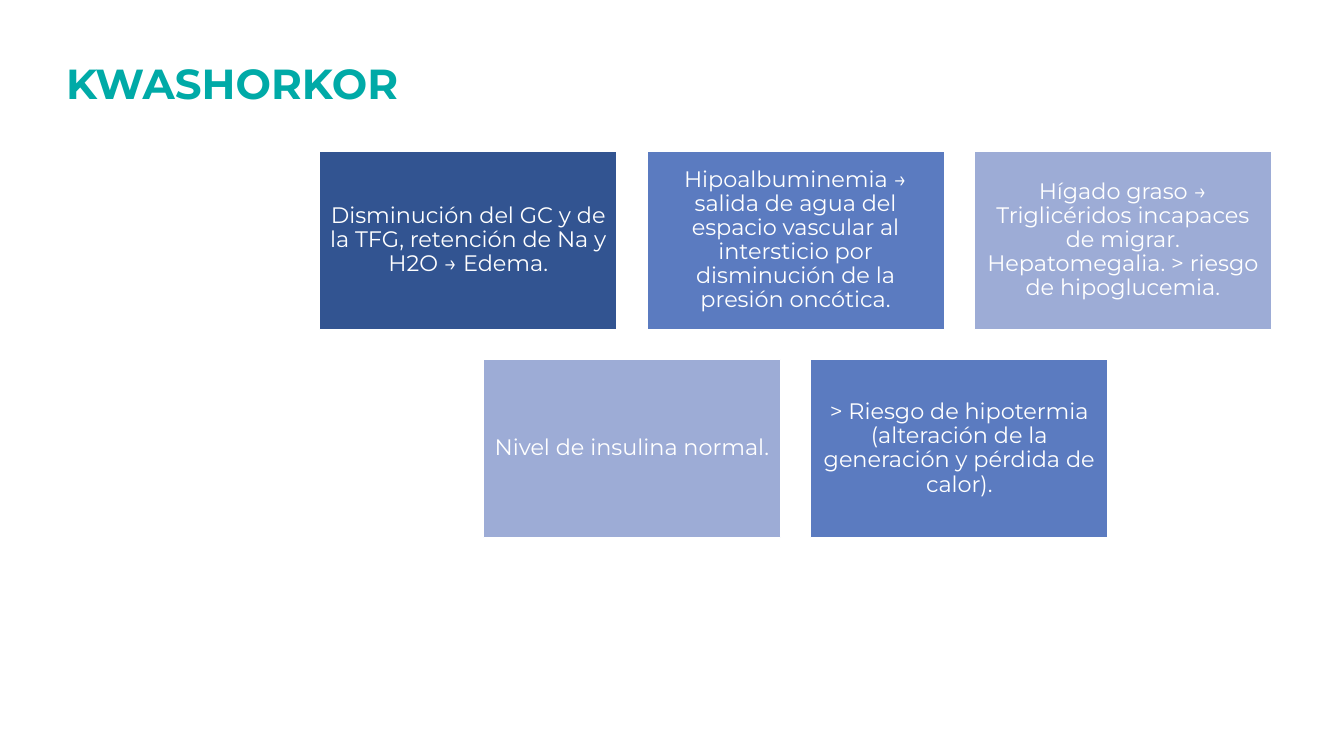
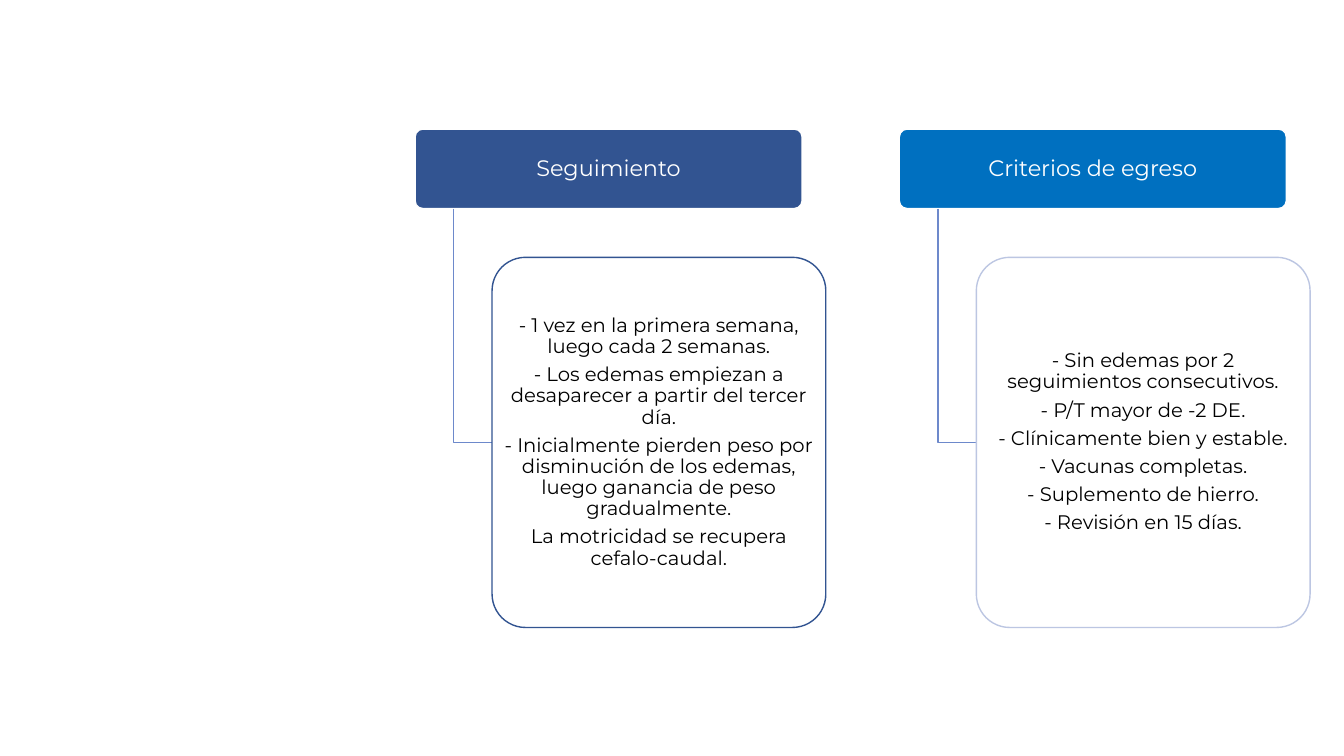
from dataclasses import dataclass

from lxml import etree
from pptx import Presentation
from pptx.dml.color import RGBColor
from pptx.enum.shapes import MSO_SHAPE as Preset
from pptx.enum.text import MSO_ANCHOR as Anchor
from pptx.enum.text import MSO_AUTO_SIZE as AutoSize
from pptx.enum.text import PP_ALIGN as Align
from pptx.oxml.ns import qn
from pptx.shapes.autoshape import Shape
from pptx.slide import Slide
from pptx.text.text import TextFrame
from pptx.util import Pt

FONT = "Montserrat"
WHITE = "FFFFFF"
BLACK = "000000"
TEAL = "00AAA7"
NAVY = "325491"
BLUE = "5B7BC0"
LAVENDER = "9DACD6"
BRIGHT = "0070C0"
PALE = "BCC6E2"
BRACKET = "6D89CB"

CARD_WIDTH, CARD_HEIGHT, CARD_GAP = 212.4, 127.4, 21.4
CARDS_TOP, CARDS_CENTER = 108, 568.3

COLUMN_LEFT, COLUMN_TOP, COLUMN_PITCH = 296.5, 92.2, 345.9
HEADER_WIDTH, HEADER_HEIGHT = 276.5, 56.8
DETAIL_INDENT, DETAIL_TOP = 55, 183.8
DETAIL_WIDTH, DETAIL_HEIGHT = 238.4, 264.4


@dataclass(frozen=True)
class Card:
    text: str
    fill: str


@dataclass(frozen=True)
class Column:
    heading: str
    fill: str
    border: str
    items: tuple[str, ...]


@dataclass(frozen=True)
class Area:
    left: float
    top: float
    width: float
    height: float


CARD_ROWS = (
    (
        Card("Disminución del GC y de la TFG, retención de Na y H2O → Edema.", NAVY),
        Card("Hipoalbuminemia → salida de agua del espacio vascular al "
             "intersticio por disminución de la presión oncótica.", BLUE),
        Card("Hígado graso → Triglicéridos incapaces de migrar. "
             "Hepatomegalia. > riesgo de hipoglucemia.", LAVENDER),
    ),
    (
        Card("Nivel de insulina normal.", LAVENDER),
        Card("> Riesgo de hipotermia (alteración de la generación y "
             "pérdida de calor).", BLUE),
    ),
)

COLUMNS = (
    Column("Seguimiento", NAVY, NAVY, (
        "- 1 vez en la primera semana, luego cada 2 semanas.",
        "- Los edemas empiezan a desaparecer a partir del tercer día.",
        "- Inicialmente pierden peso por disminución de los edemas, "
        "luego ganancia de peso gradualmente.",
        "La motricidad se recupera cefalo-caudal.",
    )),
    Column("Criterios de egreso", BRIGHT, PALE, (
        "- Sin edemas por 2 seguimientos consecutivos.",
        "- P/T mayor de -2 DE.",
        "- Clínicamente bien y estable.",
        "- Vacunas completas.",
        "- Suplemento de hierro.",
        "- Revisión en 15 días.",
    )),
)


def color(value: str) -> RGBColor:
    return RGBColor.from_string(value)


def write(frame: TextFrame, texts: tuple[str, ...], size: float, ink: str,
          bold: bool = False, line_spacing: float = 0.9, gap: float = 5) -> None:
    frame.word_wrap = True
    for index, text in enumerate(texts):
        para = frame.add_paragraph() if index else frame.paragraphs[0]
        para.alignment = Align.CENTER
        para.line_spacing = line_spacing
        para.space_before = Pt(0)
        para.space_after = Pt(gap)
        span = para.add_run()
        span.text = text
        span.font.name = FONT
        span.font.size = Pt(size)
        span.font.bold = bold
        span.font.color.rgb = color(ink)


def set_insets(frame: TextFrame, side: float, end: float) -> None:
    frame.margin_left = frame.margin_right = Pt(side)
    frame.margin_top = frame.margin_bottom = Pt(end)


def add_box(page: Slide, preset: Preset, area: Area, fill: str, border: str) -> Shape:
    box = page.shapes.add_shape(
        preset, Pt(area.left), Pt(area.top), Pt(area.width), Pt(area.height))
    box.shadow.inherit = False
    box.fill.solid()
    box.fill.fore_color.rgb = color(fill)
    box.line.color.rgb = color(border)
    box.line.width = Pt(1)
    box.text_frame.vertical_anchor = Anchor.MIDDLE
    return box


def add_rounded(page: Slide, area: Area, fill: str, border: str) -> Shape:
    box = add_box(page, Preset.ROUNDED_RECTANGLE, area, fill, border)
    box.adjustments[0] = 0.1
    set_insets(box.text_frame, 2, 1.5)
    return box


def set_opacity(box: Shape, percent: int) -> None:
    tint = box.fill._xPr.find(qn("a:solidFill"))[0]
    etree.SubElement(tint, qn("a:alpha")).set("val", str(percent * 1000))


def add_title(page: Slide, text: str) -> None:
    title = page.shapes.title
    title.left, title.top, title.width, title.height = (
        Pt(30.2), Pt(37.4), Pt(271.4), Pt(43.9))
    title.text_frame.auto_size = AutoSize.NONE
    title.text_frame.vertical_anchor = Anchor.TOP
    write(title.text_frame, (text,), 30, TEAL, bold=True, line_spacing=1.0, gap=0)


def add_card_row(page: Slide, row: int, cards: tuple[Card, ...]) -> None:
    pitch = CARD_WIDTH + CARD_GAP
    left = CARDS_CENTER - (len(cards) * pitch - CARD_GAP) / 2
    top = CARDS_TOP + row * (CARD_HEIGHT + CARD_GAP)
    for index, card in enumerate(cards):
        area = Area(left + index * pitch, top, CARD_WIDTH, CARD_HEIGHT)
        box = add_box(page, Preset.RECTANGLE, area, card.fill, WHITE)
        set_insets(box.text_frame, 5, 5)
        write(box.text_frame, (card.text,), 16, WHITE)


def add_bracket(page: Slide, left: float, top: float, right: float, bottom: float) -> None:
    builder = page.shapes.build_freeform(Pt(left), Pt(top))
    builder.add_line_segments(
        [(Pt(left), Pt(bottom)), (Pt(right), Pt(bottom))], close=False)
    bracket = builder.convert_to_shape()
    bracket.shadow.inherit = False
    bracket.fill.background()
    bracket.line.color.rgb = color(BRACKET)
    bracket.line.width = Pt(1)


def add_column(page: Slide, left: float, column: Column) -> None:
    header = add_rounded(
        page, Area(left, COLUMN_TOP, HEADER_WIDTH, HEADER_HEIGHT), column.fill, WHITE)
    write(header.text_frame, (column.heading,), 16, WHITE)
    detail_left = left + DETAIL_INDENT
    add_bracket(page, left + DETAIL_INDENT / 2, COLUMN_TOP + HEADER_HEIGHT,
                detail_left, DETAIL_TOP + DETAIL_HEIGHT / 2)
    detail = add_rounded(
        page, Area(detail_left, DETAIL_TOP, DETAIL_WIDTH, DETAIL_HEIGHT),
        WHITE, column.border)
    set_opacity(detail, 90)
    write(detail.text_frame, column.items, 14, BLACK)


def main() -> None:
    deck = Presentation()
    deck.slide_width, deck.slide_height = Pt(960), Pt(540)
    title_only, blank = deck.slide_layouts[5], deck.slide_layouts[6]

    disease_page = deck.slides.add_slide(title_only)
    add_title(disease_page, "KWASHORKOR")
    for row, cards in enumerate(CARD_ROWS):
        add_card_row(disease_page, row, cards)

    follow_up_page = deck.slides.add_slide(blank)
    for index, column in enumerate(COLUMNS):
        add_column(follow_up_page, COLUMN_LEFT + index * COLUMN_PITCH, column)

    deck.save("out.pptx")


if __name__ == "__main__":
    main()
